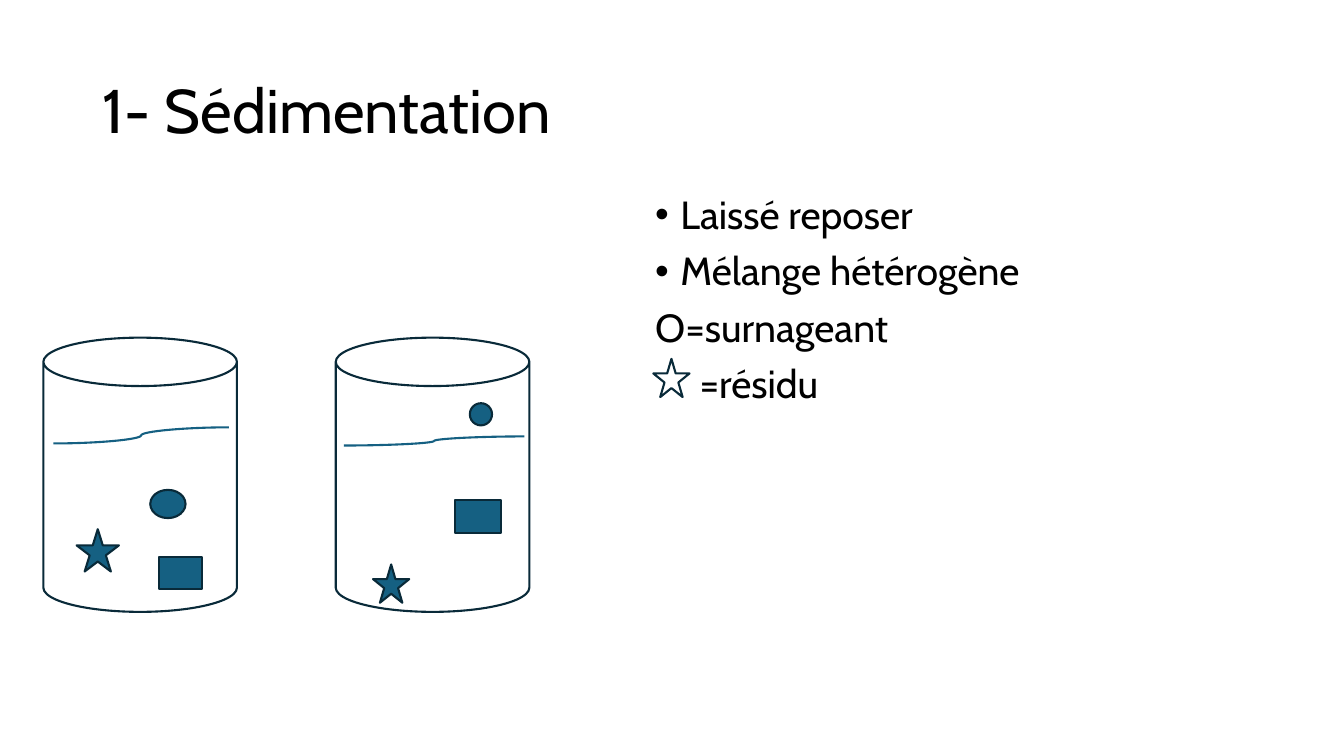
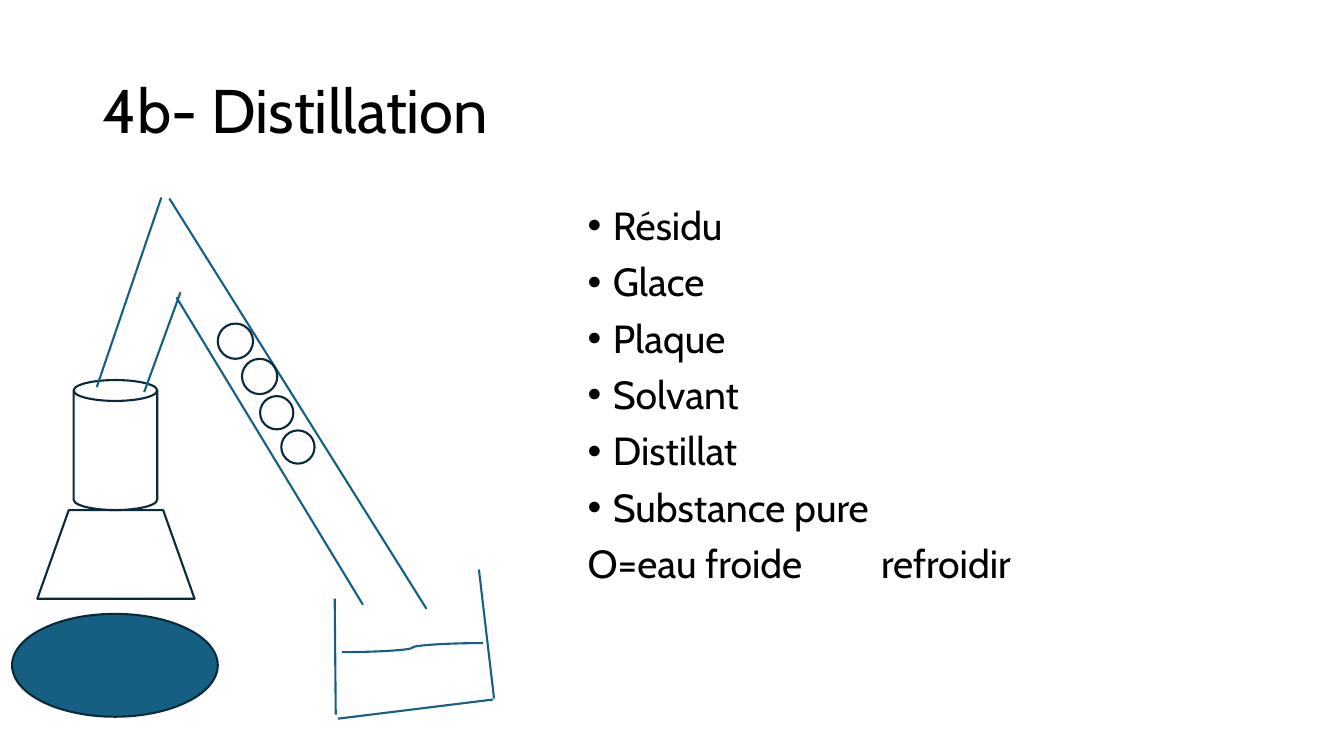
from lxml.etree import SubElement
from pptx import Presentation
from pptx.dml.color import RGBColor
from pptx.enum.shapes import MSO_CONNECTOR, MSO_SHAPE
from pptx.enum.text import MSO_ANCHOR
from pptx.oxml.ns import qn
from pptx.util import Inches, Pt

FONT = "Cabin"
TEXT = "000000"
WHITE = "FFFFFF"
TEAL = "156082"
OUTLINE = "092A39"
LINE_WIDTH = Pt(1.5)
BULLET_INDENT = 0.25


def color(hex_code):
    return RGBColor.from_string(hex_code)


def style_paragraph(paragraph, text, size):
    paragraph.text = text
    paragraph.line_spacing = 0.9
    paragraph.font.name = FONT
    paragraph.font.size = Pt(size)
    paragraph.font.color.rgb = color(TEXT)


def add_text_frame(slide, left, top, width, height):
    box = slide.shapes.add_textbox(
        Inches(left), Inches(top), Inches(width), Inches(height))
    box.text_frame.word_wrap = True
    return box.text_frame


def add_titled_slide(prs, title):
    slide = prs.slides.add_slide(prs.slide_layouts[6])
    frame = add_text_frame(slide, 0.92, 0.4, 11.5, 1.45)
    frame.vertical_anchor = MSO_ANCHOR.MIDDLE
    style_paragraph(frame.paragraphs[0], title, 44)
    return slide


def add_body_paragraph(frame, text):
    first = frame.paragraphs[0]
    paragraph = first if not first.runs else frame.add_paragraph()
    style_paragraph(paragraph, text, 28)
    paragraph.space_before = Pt(10)
    return paragraph


def add_bullets(frame, items):
    for item in items:
        properties = add_body_paragraph(frame, item)._p.get_or_add_pPr()
        properties.set("marL", str(Inches(BULLET_INDENT)))
        properties.set("indent", str(-Inches(BULLET_INDENT)))
        bullet_font = SubElement(properties, qn("a:buFont"))
        bullet_font.set("typeface", "Arial")
        SubElement(properties, qn("a:buChar")).set("char", "•")
        # Default run properties must follow the bullet in the schema order.
        properties.append(properties.find(qn("a:defRPr")))


def add_legend(frame, text, indent=0, tab=None):
    """Add an unbulleted line, optionally indented or with one tab stop."""
    properties = add_body_paragraph(frame, text)._p.get_or_add_pPr()
    properties.set("marL", str(Inches(indent)))
    if tab:
        stops = SubElement(properties, qn("a:tabLst"))
        stop = SubElement(stops, qn("a:tab"))
        stop.set("pos", str(Inches(tab)))
        stop.set("algn", "l")
        properties.append(properties.find(qn("a:defRPr")))


def add_figure(slide, kind, left, top, width, height, fill=None, rotation=0):
    figure = slide.shapes.add_shape(
        kind, Inches(left), Inches(top), Inches(width), Inches(height))
    figure.shadow.inherit = False
    figure.rotation = rotation
    if fill:
        figure.fill.solid()
        figure.fill.fore_color.rgb = color(fill)
    else:
        figure.fill.background()
    figure.line.color.rgb = color(OUTLINE)
    figure.line.width = LINE_WIDTH


def add_stroke(slide, x1, y1, x2, y2, kind=MSO_CONNECTOR.STRAIGHT):
    stroke = slide.shapes.add_connector(
        kind, Inches(x1), Inches(y1), Inches(x2), Inches(y2))
    stroke.line.color.rgb = color(TEAL)
    stroke.line.width = LINE_WIDTH
    SubElement(stroke._element.spPr, qn("a:effectLst"))


def add_liquid_level(slide, x1, y1, x2, y2):
    add_stroke(slide, x1, y1, x2, y2, MSO_CONNECTOR.CURVE)


def build_sedimentation(prs):
    slide = add_titled_slide(prs, "1- Sédimentation")
    notions = add_text_frame(slide, 6.4, 1.89, 6.01, 4.87)
    add_bullets(notions, ["Laissé reposer", "Mélange hétérogène"])
    add_legend(notions, "O=surnageant")
    add_legend(notions, "=résidu", indent=0.44)
    add_figure(slide, MSO_SHAPE.STAR_5_POINT, 6.48, 3.56, 0.36, 0.38, WHITE)

    for beaker_left in (0.43, 3.33):
        add_figure(slide, MSO_SHAPE.CAN, beaker_left, 3.35, 1.92, 2.72)
    add_liquid_level(slide, 0.53, 4.4, 2.27, 4.24)
    add_liquid_level(slide, 3.41, 4.42, 5.2, 4.33)

    particles = [
        (MSO_SHAPE.RECTANGLE, 1.58, 5.53, 0.42, 0.31),
        (MSO_SHAPE.OVAL, 1.49, 4.86, 0.35, 0.28),
        (MSO_SHAPE.STAR_5_POINT, 0.76, 5.25, 0.42, 0.42),
        (MSO_SHAPE.OVAL, 4.66, 4, 0.22, 0.22),
        (MSO_SHAPE.STAR_5_POINT, 3.7, 5.6, 0.36, 0.38),
        (MSO_SHAPE.RECTANGLE, 4.51, 4.96, 0.46, 0.33),
    ]
    for particle in particles:
        add_figure(slide, *particle, fill=TEAL)


def build_distillation(prs):
    slide = add_titled_slide(prs, "4b- Distillation")
    notions = add_text_frame(slide, 5.73, 2, 6.69, 4.76)
    add_bullets(notions, ["Résidu", "Glace", "Plaque", "Solvant",
                          "Distillat", "Substance pure"])
    add_legend(notions, "O=eau froide\trefroidir", tab=2.91)

    # Hot plate, stand and flask
    add_figure(slide, MSO_SHAPE.OVAL, 0.12, 6.09, 2.04, 1.02, TEAL)
    add_figure(slide, MSO_SHAPE.FLOWCHART_MANUAL_OPERATION,
               0.37, 5.06, 1.56, 0.88, rotation=180)
    add_figure(slide, MSO_SHAPE.CAN, 0.73, 3.77, 0.83, 1.29)

    tube_walls = [
        (1.43, 3.89, 1.79, 2.9),
        (1.75, 2.95, 3.6, 6),
        (0.96, 3.84, 1.6, 1.96),
        (1.68, 1.97, 4.23, 6.04),
    ]
    collector_walls = [
        (3.32, 5.94, 3.33, 7.09),
        (3.35, 7.13, 4.89, 6.94),
        (4.9, 6.93, 4.75, 5.65),
    ]
    for wall in tube_walls + collector_walls:
        add_stroke(slide, *wall)
    add_liquid_level(slide, 3.39, 6.47, 4.79, 6.38)

    cold_water = [(2.16, 3.21, 0.35), (2.4, 3.56, 0.35),
                  (2.58, 3.93, 0.33), (2.79, 4.27, 0.33)]
    for left, top, diameter in cold_water:
        add_figure(slide, MSO_SHAPE.OVAL, left, top, diameter, diameter)


def main():
    prs = Presentation()
    prs.slide_width = Inches(13.33)
    prs.slide_height = Inches(7.5)
    build_sedimentation(prs)
    build_distillation(prs)
    prs.save("out.pptx")


if __name__ == "__main__":
    main()
